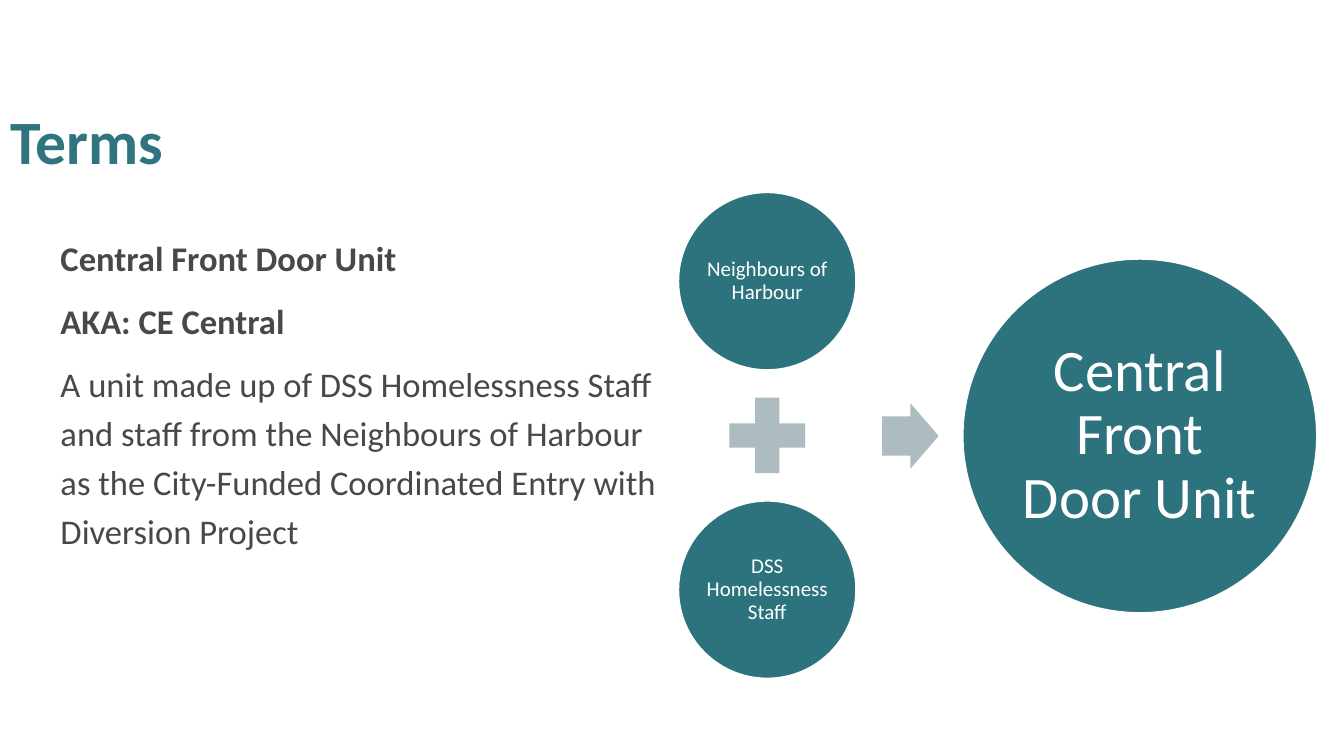
from dataclasses import dataclass

from pptx import Presentation
from pptx.dml.color import RGBColor
from pptx.enum import shapes, text
from pptx.util import Emu, Pt

PX = 9144  # EMU per px, 100 px to the inch
FONT = "Calibri"
TITLE_TEAL = RGBColor(0x2F, 0x74, 0x7E)
TEAL = RGBColor(0x2D, 0x73, 0x7E)
BODY_GREY = RGBColor(0x48, 0x48, 0x48)
SIGN_GREY = RGBColor(0xAD, 0xBC, 0xC0)
WHITE = RGBColor(0xFF, 0xFF, 0xFF)

MID_Y = 432  # centre line of the diagram
STEP_Y = 153  # from the plus sign to each small circle
PARTS_X = 761  # centre of the column of parts


@dataclass
class Circle:
    label: str
    cx: int
    cy: int
    size: int
    pt: int
    inset: int


@dataclass
class Sign:
    kind: shapes.MSO_SHAPE
    cx: int
    width: int
    height: int


CIRCLES = [
    Circle("Neighbours of Harbour", PARTS_X, MID_Y - STEP_Y, 176, 15, 2),
    Circle("DSS Homelessness Staff", PARTS_X, MID_Y + STEP_Y, 176, 15, 2),
    Circle("Central Front Door Unit", 1130, MID_Y, 351, 42, 6),
]
SIGNS = [
    Sign(shapes.MSO_SHAPE.MATH_PLUS, PARTS_X, 102, 102),
    Sign(shapes.MSO_SHAPE.RIGHT_ARROW, 903, 56, 65),
]
TERMS = [
    ("Central Front Door Unit", True),
    ("AKA: CE Central", True),
    ("A unit made up of DSS Homelessness Staff and staff from the Neighbours "
     "of Harbour as the City-Funded Coordinated Entry with Diversion Project", False),
]


def px(n: int) -> Emu:
    return Emu(n * PX)


def place(sp, left: int, top: int, width: int, height: int) -> None:
    sp.left, sp.top, sp.width, sp.height = map(px, (left, top, width, height))


def style(p, size: float, color: RGBColor, align, spacing: float, bold: bool = False) -> None:
    p.alignment = align
    p.line_spacing = spacing
    for r in p.runs:
        r.font.name = FONT
        r.font.size = Pt(size)
        r.font.bold = bold
        r.font.color.rgb = color


def add_centred(s, kind, cx: int, cy: int, width: int, height: int, fill: RGBColor):
    sp = s.shapes.add_shape(kind, px(cx - width // 2), px(cy - height // 2),
                            px(width), px(height))
    sp.shadow.inherit = False
    sp.fill.solid()
    sp.fill.fore_color.rgb = fill
    sp.line.fill.background()
    return sp


def add_circle(s, c: Circle) -> None:
    sp = add_centred(s, shapes.MSO_SHAPE.OVAL, c.cx, c.cy, c.size, c.size, TEAL)
    sp.line.color.rgb = WHITE
    sp.line.width = Pt(1)
    tf = sp.text_frame
    tf.text = c.label
    tf.word_wrap = True
    tf.vertical_anchor = text.MSO_ANCHOR.MIDDLE
    tf.margin_left = tf.margin_right = tf.margin_top = tf.margin_bottom = px(c.inset)
    style(tf.paragraphs[0], c.pt, WHITE, text.PP_ALIGN.CENTER, 0.9)


def add_sign(s, sign: Sign) -> None:
    sp = add_centred(s, sign.kind, sign.cx, MID_Y, sign.width, sign.height, SIGN_GREY)
    if sign.kind == shapes.MSO_SHAPE.RIGHT_ARROW:
        sp.adjustments[0] = 0.6
        sp.adjustments[1] = 0.5


def main() -> None:
    prs = Presentation()
    prs.slide_width, prs.slide_height = px(1333), px(750)
    s = prs.slides.add_slide(prs.slide_layouts[0])

    # Title
    title = s.shapes.title
    place(title, 0, 63, 1133, 161)
    tf = title.text_frame
    tf.text = "Terms"
    tf.auto_size = text.MSO_AUTO_SIZE.NONE
    tf.vertical_anchor = text.MSO_ANCHOR.MIDDLE
    style(tf.paragraphs[0], 44, TITLE_TEAL, text.PP_ALIGN.LEFT, 0.9, True)

    # Definition
    body = s.placeholders[1]
    place(body, 50, 223, 622, 417)
    tf = body.text_frame
    tf.text = "\n".join(line for line, _ in TERMS)
    tf.auto_size = text.MSO_AUTO_SIZE.NONE
    tf.vertical_anchor = text.MSO_ANCHOR.TOP
    for i, (p, (_, bold)) in enumerate(zip(tf.paragraphs, TERMS)):
        style(p, 24.7, BODY_GREY, text.PP_ALIGN.LEFT, 1.18, bold)
        p.space_before = Pt(10 if i else 0)

    # Diagram
    for circle in CIRCLES:
        add_circle(s, circle)
    for sign in SIGNS:
        add_sign(s, sign)

    prs.save("out.pptx")


if __name__ == "__main__":
    main()
